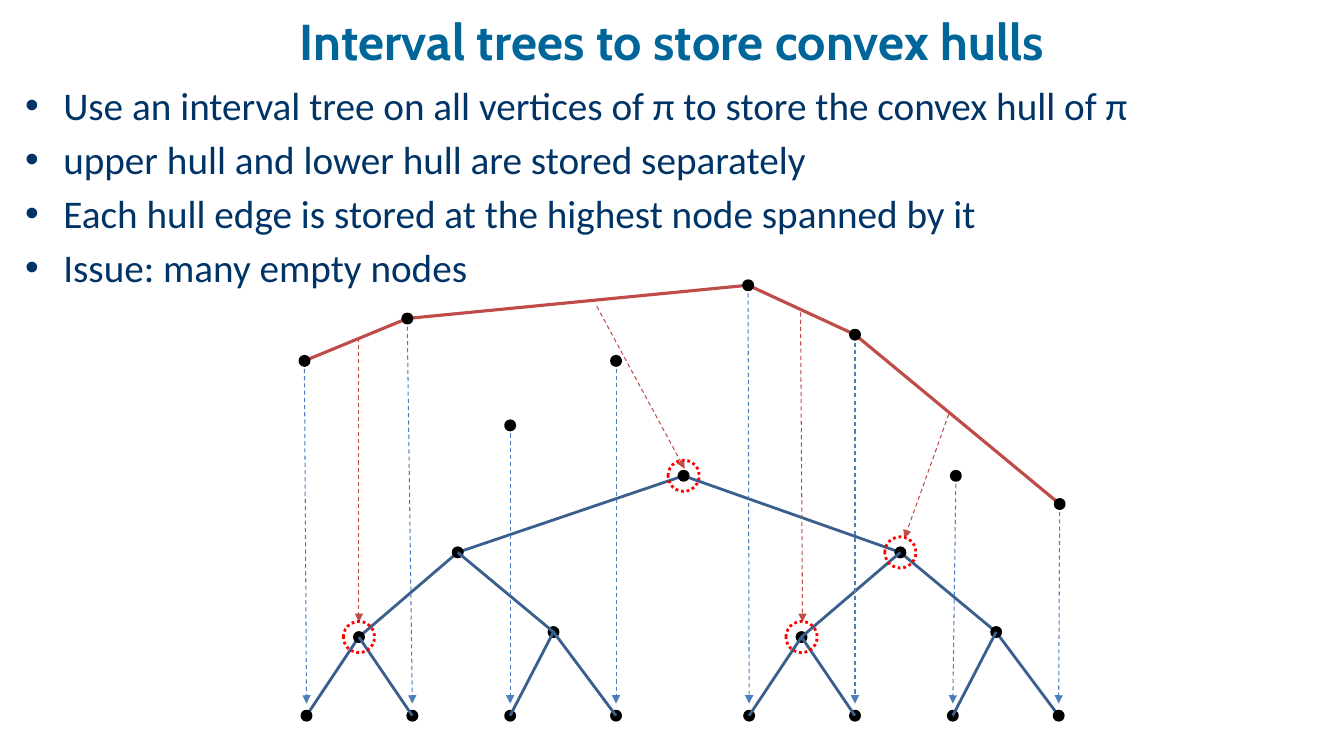
from lxml import etree
from pptx import Presentation
from pptx.dml.color import RGBColor
from pptx.enum.dml import MSO_LINE
from pptx.enum.shapes import MSO_CONNECTOR, MSO_SHAPE
from pptx.enum.text import MSO_ANCHOR, PP_ALIGN
from pptx.oxml.ns import qn
from pptx.util import Inches, Pt

OVAL, STRAIGHT = MSO_SHAPE.OVAL, MSO_CONNECTOR.STRAIGHT
DASH, DOTTED = MSO_LINE.DASH, MSO_LINE.ROUND_DOT
MIDDLE, CENTER = MSO_ANCHOR.MIDDLE, PP_ALIGN.CENTER

COLORS = {
    "title": "006699", "body": "003366", "node": "000000", "ring": "FF0000",
    "tree": "3A5F8C", "hull": "BF4C48", "drop": "4B7EBC",
}
TITLE = "Interval trees to store convex hulls"
BULLETS = [
    "Use an interval tree on all vertices of π to store the convex hull of π",
    "upper hull and lower hull are stored separately",
    "Each hull edge is stored at the highest node spanned by it",
    "Issue: many empty nodes",
]

# Diagram coordinates are inches from the top left of the diagram box.
VERTICES = [(0.02, 0.78), (1.04, 0.36), (2.06, 1.42), (3.11, 0.78),
            (4.42, 0.03), (5.48, 0.52), (6.48, 1.92), (7.51, 2.2)]
HULL = [0, 1, 4, 5, 7]
ROOT = (3.78, 1.92)
# Each half: top node, its two children, then four leaves.
LEFT_HALF = [(1.54, 2.68), (0.56, 3.52), (2.49, 3.47),
             (0.04, 4.3), (1.09, 4.3), (2.06, 4.3), (3.11, 4.3)]
HALF_SHIFT = 4.39
RIGHT_HALF = [(x + HALF_SHIFT, y) for x, y in LEFT_HALF]
STORED_EDGES = [((0.56, 0.55), (0.56, 3.37)), ((2.92, 0.24), (3.79, 1.85)),
                ((4.94, 0.3), (4.96, 3.37)), ((6.41, 1.31), (5.97, 2.54))]
DOT_SIZE, RING_SIZE = 0.09, 0.31


def rgb(name):
    return RGBColor.from_string(COLORS[name])


def style_line(line, color, width, dash=None):
    line.color.rgb = rgb(color)
    line.width = Pt(width)
    if dash is not None:
        line.dash_style = dash


def add_text_box(slide, box):
    frame = slide.shapes.add_textbox(*map(Inches, box)).text_frame
    frame.word_wrap = True
    return frame


def add_run(paragraph, text, font, size, color):
    run = paragraph.add_run()
    run.text = text
    run.font.name = font
    run.font.size = Pt(size)
    run.font.color.rgb = rgb(color)
    return run


def add_title(slide, box):
    frame = add_text_box(slide, box)
    frame.vertical_anchor = MIDDLE
    paragraph = frame.paragraphs[0]
    paragraph.alignment = CENTER
    run = add_run(paragraph, TITLE, "Cabin", 36, "title")
    run.font.bold = True
    run.font._element.set("spc", "10")


def add_bullets(slide, box):
    frame = add_text_box(slide, box)
    for index, text in enumerate(BULLETS):
        paragraph = frame.add_paragraph() if index else frame.paragraphs[0]
        paragraph.space_before = Pt(5)
        properties = paragraph._p.get_or_add_pPr()
        properties.set("marL", str(Inches(0.38)))
        properties.set("indent", str(-Inches(0.38)))
        etree.SubElement(properties, qn("a:buFont")).set("typeface", "Arial")
        etree.SubElement(properties, qn("a:buChar")).set("char", "•")
        add_run(paragraph, text, "Calibri", 28, "body")


def add_diagram(slide, left, top):
    """Draw the hull above its interval tree, with arrows linking the two."""

    def place(point):
        return Inches(left + point[0]), Inches(top + point[1])

    def add_path(points, color, width):
        start, *rest = map(place, points)
        builder = slide.shapes.build_freeform(*start, scale=1.0)
        builder.add_line_segments(rest, close=False)
        shape = builder.convert_to_shape()
        shape.shadow.inherit = False
        shape.fill.background()
        style_line(shape.line, color, width)

    def add_circle(center, size):
        corner = [value - size / 2 for value in center]
        shape = slide.shapes.add_shape(OVAL, *place(corner), Inches(size), Inches(size))
        shape.shadow.inherit = False
        return shape

    def add_dot(center):
        dot = add_circle(center, DOT_SIZE)
        dot.fill.solid()
        dot.fill.fore_color.rgb = rgb("node")
        style_line(dot.line, "node", 2)

    def add_ring(center):
        ring = add_circle(center, RING_SIZE)
        ring.fill.background()
        style_line(ring.line, "ring", 2, DOTTED)

    def add_arrow(start, end, color):
        arrow = slide.shapes.add_connector(STRAIGHT, *place(start), *place(end))
        style_line(arrow.line, color, 0.75, DASH)
        tail = etree.SubElement(arrow.line._get_or_add_ln(), qn("a:tailEnd"))
        tail.set("type", "triangle")
        etree.SubElement(arrow._element.spPr, qn("a:effectLst"))

    left_top, left_outer, left_inner, *left_leaves = LEFT_HALF
    right_top, right_inner, right_outer, *right_leaves = RIGHT_HALF
    leaves = left_leaves + right_leaves

    add_path([leaves[0], left_outer, left_top, ROOT,
              right_top, right_outer, leaves[7]], "tree", 2)
    add_path([VERTICES[index] for index in HULL], "hull", 2.25)
    for node in [ROOT] + LEFT_HALF + RIGHT_HALF:
        add_dot(node)
    for branch in ([leaves[3], left_inner, left_top], [left_inner, leaves[2]],
                   [left_outer, leaves[1]], [leaves[4], right_inner, right_top],
                   [right_inner, leaves[5]], [leaves[6], right_outer]):
        add_path(branch, "tree", 2)
    for vertex in VERTICES:
        add_dot(vertex)
    for (x, y), (leaf_x, leaf_y) in zip(VERTICES, leaves):
        add_arrow((x, y + 0.08), (leaf_x, leaf_y - 0.12), "drop")
    for start, end in STORED_EDGES:
        add_arrow(start, end, "hull")
    for node in (left_outer, ROOT, right_inner, right_top):
        add_ring(node)


def main():
    presentation = Presentation()
    presentation.slide_width = Inches(13.33)
    presentation.slide_height = Inches(7.5)
    slide = presentation.slides.add_slide(presentation.slide_layouts[6])
    add_title(slide, (0.67, -0.22, 12, 1.25))
    add_bullets(slide, (0.15, 0.76, 12, 2.43))
    add_diagram(slide, 3, 2.8)
    presentation.save("out.pptx")


if __name__ == "__main__":
    main()
